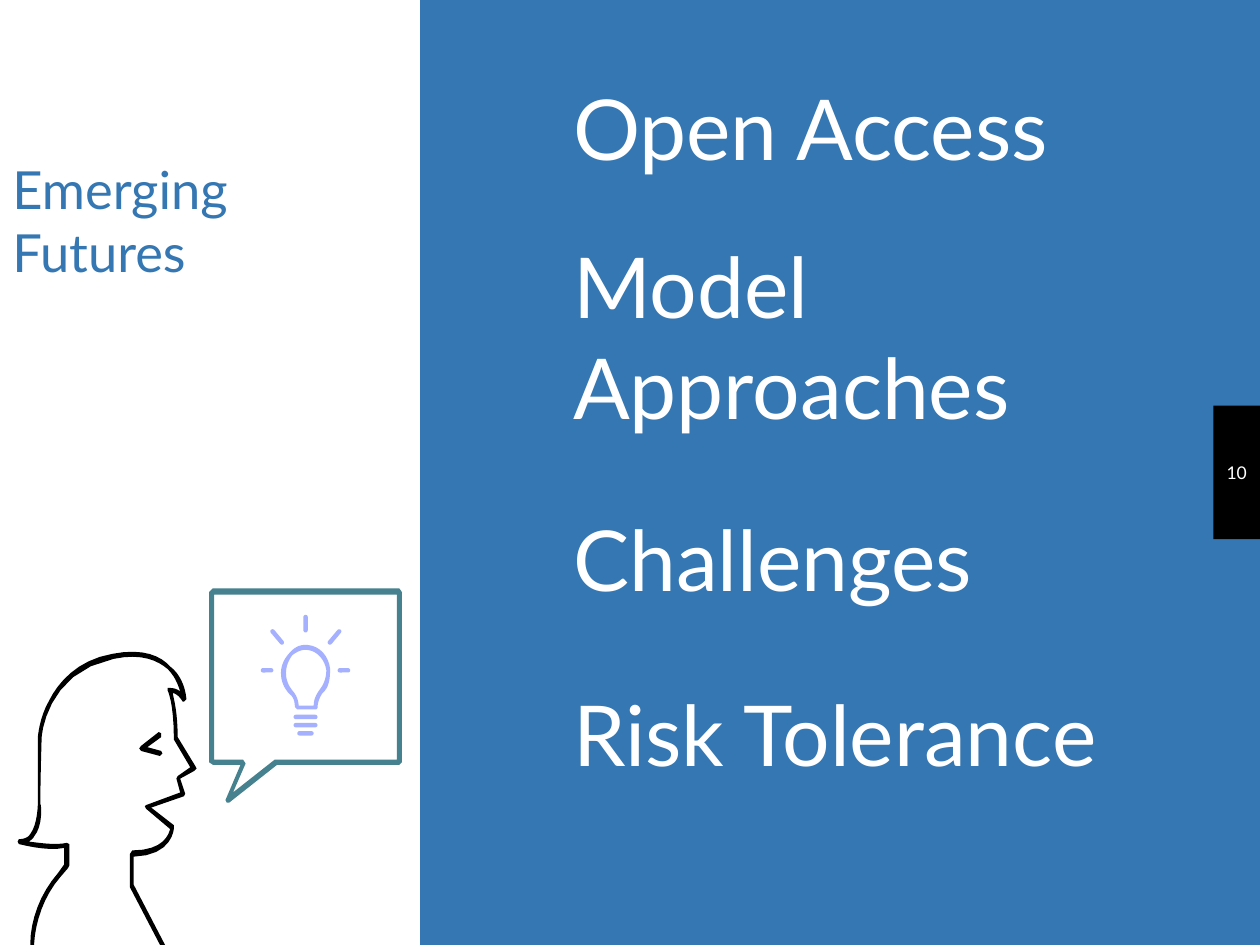
from pptx import Presentation
from pptx.dml.color import RGBColor
from pptx.enum.shapes import MSO_SHAPE as Shape
from pptx.enum.text import MSO_ANCHOR as Anchor, PP_ALIGN as Align
from pptx.util import Pt

COLOURS = {"blue": "3477B2", "white": "FFFFFF", "black": "000000",
           "teal": "45818E", "lilac": "A5B0FE"}
UNIT = 0.72  # the drawing grid is 1/100 inch, in points
CURVE_STEPS = 8

deck = Presentation()
deck.slide_width, deck.slide_height = Pt(720), Pt(540)
page = deck.slides.add_slide(deck.slide_layouts[6])
page.background.fill.solid()
page.background.fill.fore_color.rgb = RGBColor.from_string(COLOURS["blue"])


def paint(shape, colour):
    shape.shadow.inherit = False
    shape.fill.solid()
    shape.fill.fore_color.rgb = RGBColor.from_string(COLOURS[colour])
    shape.line.fill.background()


def draw_outline(contours, colour):
    """Fill closed contours; a pair is a corner, six numbers are a Bézier curve."""
    builder = None
    for contour in contours:
        points = [contour[0]]
        for step in contour[1:]:
            if len(step) == 2:
                points.append(step)
                continue
            knots = [points[-1], step[:2], step[2:4], step[4:]]
            for i in range(1, CURVE_STEPS + 1):
                t = i / CURVE_STEPS
                weights = ((1 - t) ** 3, 3 * t * (1 - t) ** 2, 3 * t * t * (1 - t), t ** 3)
                points.append(tuple(sum(w * k[axis] for w, k in zip(weights, knots))
                                    for axis in (0, 1)))
        points = [(Pt(x * UNIT), Pt(y * UNIT)) for x, y in points]
        if builder is None:
            builder = page.shapes.build_freeform(*points[0])
        else:
            builder.move_to(*points[0])
        builder.add_line_segments(points[1:], close=True)
    paint(builder.convert_to_shape(), colour)


# Side panel and page number
panel = page.shapes.add_shape(Shape.RECTANGLE, 0, 0, Pt(240), Pt(540))
paint(panel, "white")
number_tab = page.shapes.add_shape(Shape.RECTANGLE, Pt(693.4), Pt(231.8), Pt(26.6), Pt(76.3))
paint(number_tab, "black")

# Title and topics
texts = [(number_tab, "10", 10, "white")]
for left, top, width, height, words, size, colour in [
    (0, 79.2, 175.7, 90, "Emerging Futures", 30, "blue"),
    (320.4, 14.4, 386, 94.3, "Open Access", 48, "white"),
    (320.4, 170.6, 386, 85.7, "Model Approaches", 48, "white"),
    (320.4, 261.4, 386, 93.6, "Challenges", 48, "white"),
    (320.4, 361.4, 386, 93.6, "Risk Tolerance", 48, "white"),
]:
    box = page.shapes.add_textbox(Pt(left), Pt(top), Pt(width), Pt(height))
    texts.append((box, words, size, colour))

for box, words, size, colour in texts:
    frame = box.text_frame
    frame.word_wrap = True
    frame.margin_left = frame.margin_right = Pt(7.2)
    frame.margin_top = frame.margin_bottom = Pt(7.2)
    para = frame.paragraphs[0]
    para.text = words
    para.font.name, para.font.size = "Lato", Pt(size)
    para.font.color.rgb = RGBColor.from_string(COLOURS[colour])
    is_number = box is number_tab
    frame.vertical_anchor = Anchor.MIDDLE if is_number else Anchor.BOTTOM
    para.alignment = Align.CENTER if is_number else Align.LEFT

# Speaking figure
eye = [(112, 592), (126, 581), (128, 582), (128, 585), (117, 593), (128, 596),
       (129, 598), (127, 600), (112, 596), (110.5, 594)]
head = [
    (138, 655), (138, 657), (138, 658, 137, 679, 106, 680), (106, 702), (131, 750),
    (127, 750), (103, 704), (103, 678), (105, 675), (130, 675, 134, 662, 135, 658),
    (116, 642), (115, 640), (116, 639), (143, 629), (140, 618), (141, 616), (151, 609),
    (138, 587), (138, 557, 133, 548, 133, 548), (133, 546), (134, 546),
    (138, 546, 141, 547, 143, 549), (141, 542, 138, 536, 133, 531),
    (126, 525, 113, 518, 90, 523), (36, 534, 33, 585, 33, 586),
    (33, 590, 32, 618, 32, 638), (33, 639, 34, 656, 27, 664), (26, 666, 24, 667, 23, 668),
    (31, 669, 44, 671, 53, 669), (55, 670), (55, 687), (54, 689), (48, 696),
    (35, 711, 28, 731, 27, 750), (24, 750), (24, 730, 32, 709, 46, 693), (51, 686),
    (51, 673), (37, 676, 16, 670, 15, 670), (14, 668), (15, 666),
    (19, 666, 22, 665, 24, 662), (30, 654, 30, 638, 30, 638), (30, 586),
    (30, 585, 31, 570, 39, 556), (46, 542, 61, 524, 89, 519),
    (114, 514, 128, 521, 135, 529), (143, 535, 147, 545, 148, 555), (146, 557),
    (145, 557), (145, 557, 142, 551, 137, 550), (138, 555, 141, 565, 141, 585),
    (155, 608), (156, 610), (154, 612), (143, 618), (147, 630), (146, 632), (120, 641),
]
draw_outline([eye], "black")
draw_outline([head], "black")

# Speech bubble
bubble_outside = [(169, 467), (317, 467), (319, 470), (319, 605), (317, 607), (220, 607),
                  (182, 637), (180, 637), (179, 635), (191, 607), (169, 607),
                  (166, 605), (166, 470)]
bubble_inside = [(170, 603), (193, 603), (195, 606), (185, 629), (218, 603),
                 (315, 603), (315, 472), (170, 472)]
draw_outline([bubble_outside, bubble_inside], "teal")

# Light bulb
bulb_outside = [
    (256, 550), (254, 553, 252, 557, 252, 562), (251, 563), (236, 563), (234, 561),
    (234, 557, 233, 553, 230, 551), (225, 546, 223, 540, 223, 534),
    (223, 528, 226, 522, 230, 518), (234, 513, 240, 511, 245, 512),
    (254, 513, 261, 521, 262, 531), (262, 539, 261, 546, 256, 550),
]
bulb_inside = [
    (259, 532), (258, 524, 252, 517, 245, 516), (240, 515, 236, 517, 232, 520),
    (229, 524, 227, 529, 227, 534), (227, 540, 229, 544, 232, 548),
    (235, 551, 237, 556, 237, 560), (249, 560), (249, 555, 251, 551, 254, 547),
    (257, 543, 259, 538, 259, 532),
]
draw_outline([bulb_outside, bulb_inside], "lilac")

# Rays and screw thread: centre, length and turn of each rounded bar
thickness = 3.5
for x, y, length, turn in [
    (212, 532, 10, 0), (220, 505.5, 15, 50), (242.5, 495, 14, 90),
    (265.5, 505.5, 15, -50), (273, 532, 10, 0),
    (242.5, 569, 19, 0), (242.5, 575.5, 19, 0), (242.5, 582, 13, 0),
]:
    bar = page.shapes.add_shape(
        Shape.ROUNDED_RECTANGLE, Pt((x - length / 2) * UNIT), Pt((y - thickness / 2) * UNIT),
        Pt(length * UNIT), Pt(thickness * UNIT))
    bar.adjustments[0] = 0.5
    bar.rotation = turn
    paint(bar, "lilac")

deck.save("out.pptx")
